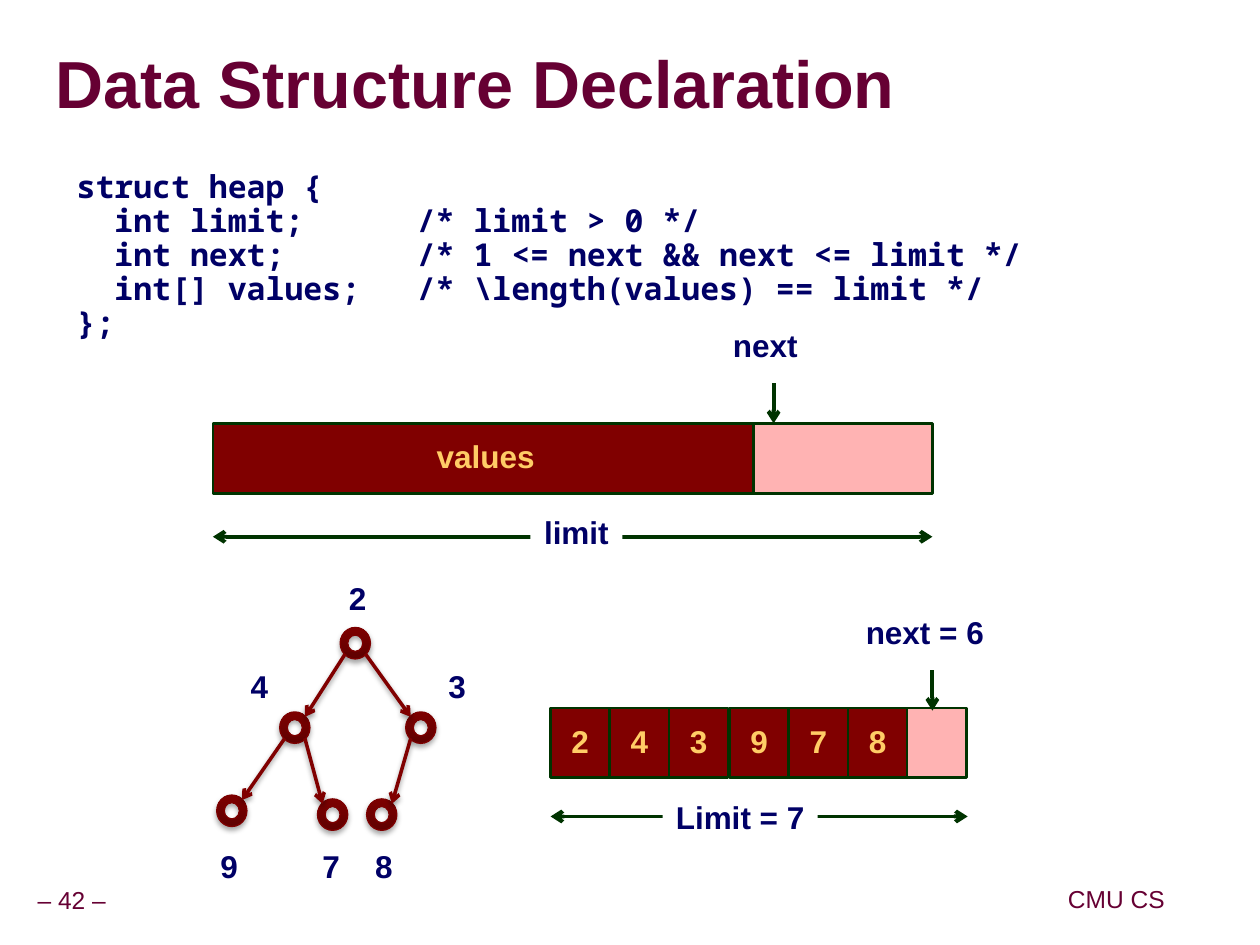
import pptx
import pptx.util
import pptx.dml.color
import pptx.enum.shapes
import pptx.enum.text
import pptx.oxml.ns
import lxml.etree

PX = 9144  # one px is a hundredth of an inch
hue = pptx.dml.color.RGBColor.from_string
Pt = pptx.util.Pt
qn = pptx.oxml.ns.qn
sub = lxml.etree.SubElement
Form = pptx.enum.shapes.MSO_SHAPE
Align = pptx.enum.text.PP_ALIGN
Anchor = pptx.enum.text.MSO_ANCHOR
Auto = pptx.enum.text.MSO_AUTO_SIZE

NAVY, GOLD, PLUM = "000066", "FFCC66", "660033"
RED, PINK, GREEN, WHITE = "800000", "FFB3B3", "003300", "FFFFFF"
SIDES = ("margin_left", "margin_top", "margin_right", "margin_bottom")

deck = pptx.Presentation()
deck.slide_width, deck.slide_height = 1000 * PX, 750 * PX
slide = deck.slides.add_slide(deck.slide_layouts[5])
shapes = slide.shapes


def box(at, text="", fill=None, line=None, ink=NAVY, size=18, bold=True,
        inset=None, form=Form.RECTANGLE):
    place = [n * PX for n in at]
    if fill or line:
        item = shapes.add_shape(form, *place)
        item.shadow.inherit = False
    else:
        item = shapes.add_textbox(*place)
    if fill:
        item.fill.solid()
        item.fill.fore_color.rgb = hue(fill)
    if line:
        item.line.color.rgb = hue(line)
        item.line.width = Pt(1.5)
    else:
        item.line.fill.background()
    frame = item.text_frame
    frame.word_wrap = False
    frame.vertical_anchor = Anchor.TOP
    if inset:
        frame.vertical_anchor = Anchor.MIDDLE
        for side in SIDES:
            setattr(frame, side, inset * PX)
    if text:
        frame.text = text
    for para in frame.paragraphs:
        para.alignment = Align.CENTER
        para.line_spacing = 0.9
        for run in para.runs:
            look = {"name": "Arial", "size": Pt(size), "bold": bold}
            for key, value in look.items():
                setattr(run.font, key, value)
            run.font.color.rgb = hue(ink)
    return item


def arrow(x1, y1, x2, y2, ends=("tailEnd",), ink=GREEN, width=2.25):
    item = shapes.add_connector(pptx.enum.shapes.MSO_CONNECTOR.STRAIGHT,
                                x1 * PX, y1 * PX, x2 * PX, y2 * PX)
    item.line.color.rgb = hue(ink)
    item.line.width = Pt(width)
    for end in ends:
        sub(item.line._get_or_add_ln(), qn("a:" + end), type="arrow")
    sub(item._element.spPr, qn("a:effectLst"))
    return item


# Title
title = shapes.title
spot = {"left": 44, "top": 27, "width": 953, "height": 85}
for key, value in spot.items():
    setattr(title, key, value * PX)
frame = title.text_frame
frame.text = "Data Structure Declaration"
frame.vertical_anchor = Anchor.MIDDLE
frame.auto_size = Auto.NONE
for side in SIDES:
    setattr(frame, side, 0)
para = frame.paragraphs[0]
para.alignment = Align.LEFT
para.line_spacing = 0.87
font = para.runs[0].font
for key, value in {"name": "Arial", "size": Pt(38), "bold": True}.items():
    setattr(font, key, value)
font.color.rgb = hue(PLUM)
glow = lxml.etree.Element(qn("a:effectLst"))
font._element.find(qn("a:solidFill")).addnext(glow)
shade = sub(glow, qn("a:outerShdw"), dist="38100", dir="2700000")
sub(shade, qn("a:srgbClr"), val="969696")

# Footer
for at, text in (((24, 700, 66, 31), "– 42 –"), ((842, 699, 88, 32), "CMU CS")):
    box(at, text, ink=PLUM, size=14, bold=False, inset=5)

# Code, with tab stops for the indent and the comments
code = ["struct heap {",
        "\tint limit;\t/* limit > 0 */",
        "\tint next;\t/* 1 <= next && next <= limit */",
        "\tint[] values;\t/* \\length(values) == limit */",
        "};"]
block = box((51, 131, 922, 147), "\n".join(code))
block.text_frame.word_wrap = True
for para in block.text_frame.paragraphs:
    para.alignment = Align.LEFT
    para.runs[0].font.name = "Noto Sans Mono"
    tabs = sub(para._p.get_or_add_pPr(), qn("a:tabLst"))
    for stop in (30, 270):
        sub(tabs, qn("a:tab"), pos=str(stop * PX), algn="l")

# Array in general
both = ("headEnd", "tailEnd")
box((169, 336, 433, 56), "values", RED, GREEN, GOLD, inset=5)
box((598, 336, 142, 56), "", PINK, GREEN)
arrow(614, 304, 614, 336)
arrow(169, 426, 740, 426, both)
box((571, 257, 73, 38), "next", WHITE)
box((421, 406, 73, 38), "limit", WHITE)

# Tree: value -> node left and top, label left and top
nodes = {"2": (270, 498, 267, 458), "4": (222, 565, 189, 528),
         "3": (322, 565, 346, 528), "9": (172, 631, 165, 671),
         "7": (252, 634, 246, 671), "8": (291, 634, 288, 671)}
shaded = []
for text, (x, y, left, top) in nodes.items():
    ring = box((x, y, 24, 25), "", RED, "7D0000", form=Form.DONUT)
    ring.line.width = Pt(0.75)
    ring.fill.gradient()
    ring.fill.gradient_angle = 90
    for stop, tone in zip(ring.fill.gradient_stops, ("600000", "7D0000")):
        stop.color.rgb = hue(tone)
    shaded.append((ring, 35, 1.8))
    box((left, top, 33, 40), text)

# Edges leave below a parent and reach the near upper side of a child
for up, down in ("24", "23", "49", "47", "38"):
    x1, y1 = nodes[up][:2]
    x2, y2 = nodes[down][:2]
    way = 8 if x2 > x1 else -8
    edge = arrow(x1 + 12 + way, y1 + 21, x2 + 12 - way, y2 + 4,
                 ink=RED, width=2)
    shaded.append((edge, 38, 1.6))

# Soft shadows of the tree
for item, alpha, dist in shaded:
    glow = item._element.spPr.find(qn("a:effectLst"))
    shade = sub(glow, qn("a:outerShdw"), blurRad=str(Pt(3.1)),
                dist=str(Pt(dist)), dir="5400000", rotWithShape="0")
    tone = sub(shade, qn("a:srgbClr"), val="000000")
    sub(tone, qn("a:alpha"), val=str(alpha * 1000))

# Array of the tree's values, the last cell free
cells = ["2", "4", "3", "9", "7", "8", ""]
for i, text in enumerate(cells):
    x = 437 + round(i * 47.2)
    box((x, 562, 47, 55), text, RED if text else PINK, GREEN, GOLD, inset=5)
arrow(740, 532, 740, 564)
arrow(437, 648, 768, 648, both)
box((675, 485, 118, 38), "next = 6", WHITE)
box((526, 632, 123, 38), "Limit = 7", WHITE)

deck.save("out.pptx")
